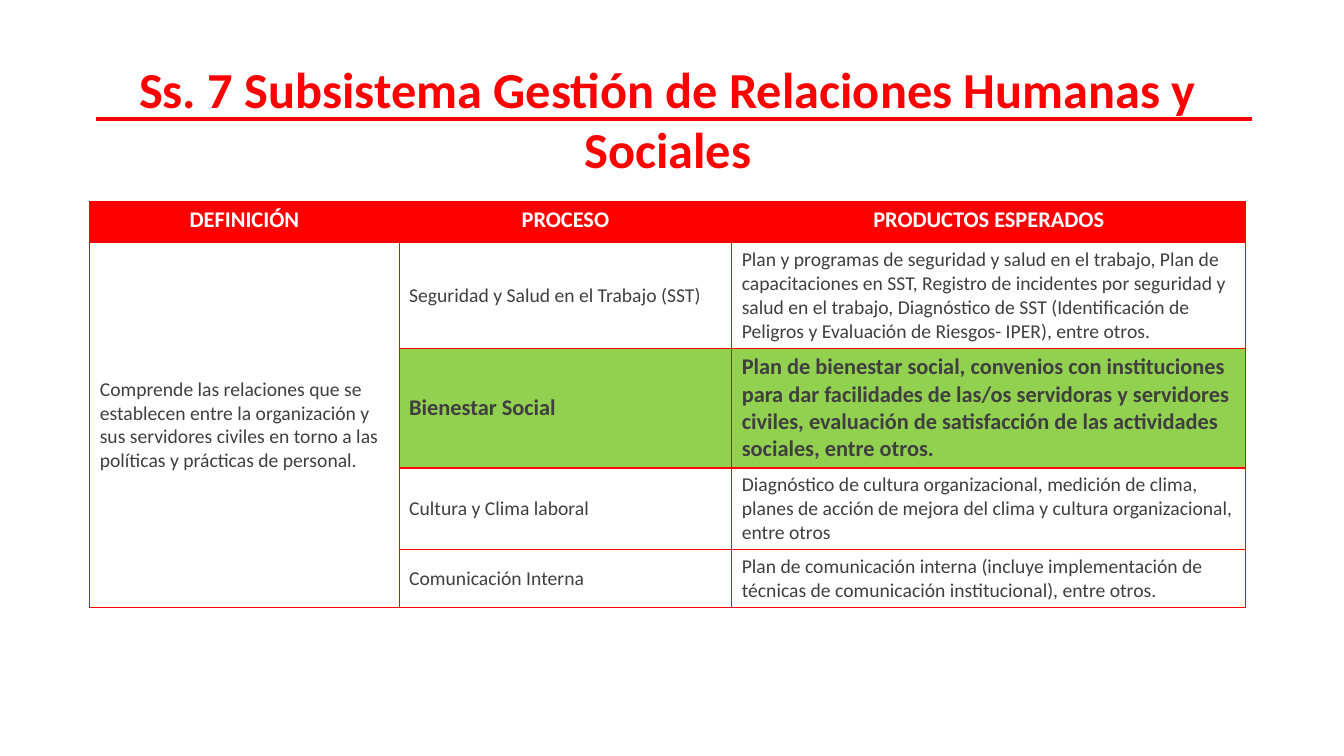
from dataclasses import dataclass

from lxml.etree import SubElement
from pptx import Presentation
from pptx.dml.color import RGBColor
from pptx.enum.shapes import MSO_CONNECTOR
from pptx.enum.text import MSO_ANCHOR, MSO_AUTO_SIZE, PP_ALIGN
from pptx.oxml import parse_xml
from pptx.oxml.ns import nsdecls, qn
from pptx.util import Pt


@dataclass(frozen=True)
class Theme:
    font: str = "Calibri"
    accent: str = "FF0000"
    highlight: str = "92D050"
    body: str = "3F3F3F"
    inverse: str = "FFFFFF"
    title_size: int = 36
    strong_size: int = 16
    body_size: int = 14
    rule_width: float = 2.25
    border_width: float = 1


class SlideBuilder:
    def __init__(self, slide, theme):
        self.slide = slide
        self.theme = theme

    def add_text(self, frame, text, size, color, bold=False, align=PP_ALIGN.LEFT):
        """Set each line of text as a paragraph with one run."""
        for index, line in enumerate(text.split("\n")):
            paragraph = frame.add_paragraph() if index else frame.paragraphs[0]
            paragraph.alignment = align
            run = paragraph.add_run()
            run.text = line
            run.font.name = self.theme.font
            run.font.size = Pt(size)
            run.font.bold = bold
            run.font.color.rgb = RGBColor.from_string(color)

    def title(self, text, left, top, width, height):
        heading = self.slide.shapes.title
        heading.left, heading.top = Pt(left), Pt(top)
        heading.width, heading.height = Pt(width), Pt(height)
        frame = heading.text_frame
        frame.word_wrap = True
        frame.auto_size = MSO_AUTO_SIZE.NONE
        frame.vertical_anchor = MSO_ANCHOR.MIDDLE
        self.add_text(frame, text, self.theme.title_size, self.theme.accent,
                      True, PP_ALIGN.CENTER)

    def rule(self, left, right, y):
        underline = self.slide.shapes.add_connector(
            MSO_CONNECTOR.STRAIGHT, Pt(left), Pt(y), Pt(right), Pt(y))
        underline.line.color.rgb = RGBColor.from_string(self.theme.accent)
        underline.line.width = Pt(self.theme.rule_width)
        SubElement(underline._element.spPr, qn("a:effectLst"))

    def table(self, left, top, widths, heights):
        grid = self.slide.shapes.add_table(
            len(heights), len(widths), Pt(left), Pt(top),
            Pt(sum(widths)), Pt(sum(heights))).table
        grid.first_row = grid.horz_banding = False
        for column, width in zip(grid.columns, widths):
            column.width = Pt(width)
        for row, height in zip(grid.rows, heights):
            row.height = Pt(height)
        for cell in grid.iter_cells():
            cell.fill.background()
            self.borders(cell)
        return grid

    def borders(self, cell):
        properties = cell._tc.get_or_add_tcPr()
        for index, side in enumerate(("lnL", "lnR", "lnT", "lnB")):
            properties.insert(index, parse_xml(
                f'<a:{side} {nsdecls("a")} w="{Pt(self.theme.border_width)}">'
                f'<a:solidFill><a:srgbClr val="{self.theme.accent}"/>'
                f'</a:solidFill></a:{side}>'))

    def fill(self, cell, color):
        cell.fill.solid()
        cell.fill.fore_color.rgb = RGBColor.from_string(color)

    def header_cell(self, cell, text):
        self.fill(cell, self.theme.accent)
        self.add_text(cell.text_frame, text, self.theme.strong_size,
                      self.theme.inverse, True, PP_ALIGN.CENTER)

    def body_cell(self, cell, text, highlighted=False):
        if highlighted:
            self.fill(cell, self.theme.highlight)
        cell.vertical_anchor = MSO_ANCHOR.MIDDLE
        size = self.theme.strong_size if highlighted else self.theme.body_size
        self.add_text(cell.text_frame, text, size, self.theme.body, highlighted)


HEADERS = ("DEFINICIÓN", "PROCESO", "PRODUCTOS ESPERADOS")
DEFINITION = ("Comprende las relaciones que se establecen entre la organización y "
              "sus servidores civiles en torno a las políticas y prácticas de personal.")
HIGHLIGHTED = "Bienestar Social"
PROCESSES = (
    ("Seguridad y Salud en el Trabajo (SST)",
     "Plan y programas de seguridad y salud en el trabajo, Plan de capacitaciones "
     "en SST, Registro de incidentes por seguridad y salud en el trabajo, "
     "Diagnóstico de SST (Identificación de Peligros y Evaluación de Riesgos- IPER), "
     "entre otros."),
    (HIGHLIGHTED,
     "Plan de bienestar social, convenios con instituciones para dar facilidades "
     "de las/os servidoras y servidores civiles, evaluación de satisfacción de las "
     "actividades sociales, entre otros."),
    ("Cultura y Clima laboral",
     "Diagnóstico de cultura organizacional, medición de clima,\n"
     "planes de acción de mejora del clima y cultura organizacional, entre otros"),
    ("Comunicación Interna",
     "Plan de comunicación interna (incluye implementación de técnicas de "
     "comunicación institucional), entre otros."),
)


def main():
    deck = Presentation()
    deck.slide_width, deck.slide_height = Pt(960), Pt(540)
    title_only = deck.slide_layouts[5]
    builder = SlideBuilder(deck.slides.add_slide(title_only), Theme())

    # Heading and its rule
    builder.title("Ss. 7 Subsistema Gestión de Relaciones Humanas y Sociales",
                  59.8, 37.4, 834.5, 94.3)
    builder.rule(68.4, 894.2, 85)

    # Table of processes, with one definition spanning all of them
    subsystem = builder.table(64.1, 144, (221, 237.6, 367.2),
                              (29.5, 74, 84, 57, 41))
    for column, header in enumerate(HEADERS):
        builder.header_cell(subsystem.cell(0, column), header)
    definition = subsystem.cell(1, 0)
    definition.merge(subsystem.cell(len(PROCESSES), 0))
    builder.body_cell(definition, DEFINITION)
    for row, (process, products) in enumerate(PROCESSES, start=1):
        for column, text in enumerate((process, products), start=1):
            builder.body_cell(subsystem.cell(row, column), text,
                              process == HIGHLIGHTED)

    deck.save("out.pptx")


if __name__ == "__main__":
    main()
